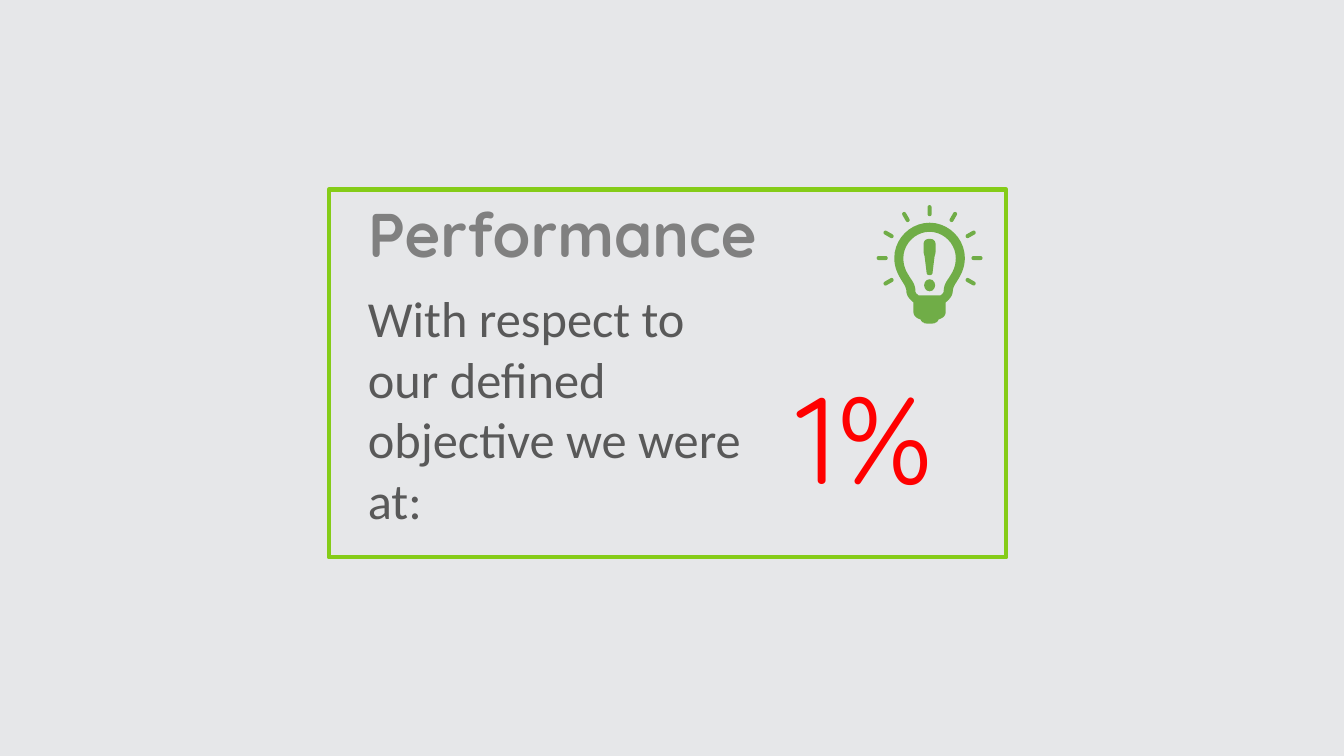
from math import cos, radians, sin

from pptx import Presentation
from pptx.dml.color import RGBColor
from pptx.enum.shapes import MSO_SHAPE
from pptx.enum.text import MSO_ANCHOR, PP_ALIGN
from pptx.util import Inches, Pt

COLORS = {
    "background": "E6E7E9",
    "border": "85CC18",
    "title": "808080",
    "body": "595959",
    "value": "FF0000",
    "bulb": "70AD47",
}
BULB_X, BULB_Y = 9.22, 2.56
RAY_RADIUS, RAY_WIDTH, RAY_LENGTH = 0.47, 0.04, 0.11
CURVE_STEPS = 10

BULB_OUTER = [
    (0, 2.21),
    (0.19, 2.21), (0.35, 2.37), (0.35, 2.56),
    (0.35, 2.68), (0.29, 2.76), (0.26, 2.81),
    (0.24, 2.84), (0.23, 2.87), (0.23, 2.89),
    (0.23, 2.93), (0.2, 2.97), (0.16, 3),
    (0.16, 3.03), (0.16, 3.09), (0.16, 3.09),
    (0.16, 3.12), (0.15, 3.15), (0.09, 3.17),
    (0.08, 3.19), (0.07, 3.2), (0.06, 3.2),
    (0.05, 3.21), (0.04, 3.21), (0.03, 3.21),
]
BULB_INNER = [
    (0, 2.3),
    (0.14, 2.3), (0.26, 2.42), (0.26, 2.56),
    (0.26, 2.66), (0.22, 2.71), (0.19, 2.76),
    (0.16, 2.8), (0.14, 2.84), (0.14, 2.89),
    (0.14, 2.91), (0.12, 2.92), (0.11, 2.93),
]
EXCLAMATION_STROKE = [
    (0, 2.37),
    (0.04, 2.37), (0.06, 2.39), (0.06, 2.43),
    (0.06, 2.51), (0.06, 2.51), (0.05, 2.54),
    (0.03, 2.7), (0.03, 2.7), (0.03, 2.7),
    (0.03, 2.72), (0.02, 2.73), (0, 2.73),
]


def color(name):
    return RGBColor.from_string(COLORS[name])


def write_text(shape, box, text, font_name, size, color_name, bold=False):
    shape.left, shape.top, shape.width, shape.height = map(Inches, box)
    text_frame = shape.text_frame
    text_frame.text = text
    text_frame.word_wrap = True
    text_frame.vertical_anchor = MSO_ANCHOR.TOP
    paragraph = text_frame.paragraphs[0]
    paragraph.alignment = PP_ALIGN.LEFT
    paragraph.line_spacing = 1.0
    paragraph.space_before = Pt(0)
    paragraph.space_after = Pt(12)
    font = paragraph.runs[0].font
    font.name, font.size, font.bold = font_name, Pt(size), bold
    font.color.rgb = color(color_name)


def add_text(slide, box, *style):
    write_text(slide.shapes.add_textbox(*map(Inches, box)), box, *style)


def add_border(slide, box):
    border = slide.shapes.add_shape(MSO_SHAPE.RECTANGLE, *map(Inches, box))
    border.shadow.inherit = False
    border.fill.background()
    border.line.color.rgb = color("border")
    border.line.width = Pt(3)


def paint_bulb_part(shape):
    shape.shadow.inherit = False
    shape.fill.solid()
    shape.fill.fore_color.rgb = color("bulb")
    shape.line.fill.background()


def bezier_point(controls, t):
    weights = ((1 - t) ** 3, 3 * t * (1 - t) ** 2, 3 * t**2 * (1 - t), t**3)
    return tuple(
        sum(weight * value for weight, value in zip(weights, values))
        for values in zip(*controls)
    )


def symmetric_contour(half):
    """Sample the right half's cubic curves and mirror them about the bulb's axis."""
    right = [half[0]]
    for start in range(0, len(half) - 1, 3):
        controls = half[start:start + 4]
        right += [bezier_point(controls, step / CURVE_STEPS)
                  for step in range(1, CURVE_STEPS + 1)]
    left = [(-x, y) for x, y in reversed(right)]
    return [(Inches(BULB_X + x), Inches(y)) for x, y in right + left]


def add_outline(group, *halves):
    contours = [symmetric_contour(half) for half in halves]
    builder = group.shapes.build_freeform(*contours[0][0])
    builder.add_line_segments(contours[0][1:])
    for contour in contours[1:]:
        builder.move_to(*contour[0])
        builder.add_line_segments(contour[1:])
    paint_bulb_part(builder.convert_to_shape())


def add_centered(group, preset, x, y, width, height):
    box = (x - width / 2, y - height / 2, width, height)
    shape = group.shapes.add_shape(preset, *map(Inches, box))
    paint_bulb_part(shape)
    return shape


def add_bulb(slide):
    group = slide.shapes.add_group_shape()
    add_outline(group, BULB_OUTER, BULB_INNER)
    for angle in range(-120, 121, 30):
        x = BULB_X + RAY_RADIUS * sin(radians(angle))
        y = BULB_Y - RAY_RADIUS * cos(radians(angle))
        ray = add_centered(group, MSO_SHAPE.ROUNDED_RECTANGLE, x, y,
                           RAY_WIDTH, RAY_LENGTH)
        ray.adjustments[0] = 0.5
        ray.rotation = angle
    add_outline(group, EXCLAMATION_STROKE)
    add_centered(group, MSO_SHAPE.OVAL, BULB_X, 2.83, 0.11, 0.12)


def main():
    presentation = Presentation()
    presentation.slide_width = Inches(13.33)
    presentation.slide_height = Inches(7.5)
    slide = presentation.slides.add_slide(presentation.slide_layouts[5])
    slide.background.fill.solid()
    slide.background.fill.fore_color.rgb = color("background")

    write_text(slide.shapes.title, (3.55, 1.89, 5.02, 0.84),
               "Performance", "Quicksand", 44, "title", True)
    add_border(slide, (3.26, 1.88, 6.72, 3.65))
    add_text(slide, (3.55, 2.8, 4.08, 2.52),
             "With respect to our defined objective we were at:",
             "Calibri", 36, "body")
    add_bulb(slide)
    add_text(slide, (7.8, 3.54, 2.02, 1.58), "1%", "Quicksand", 88, "value")
    presentation.save("out.pptx")


if __name__ == "__main__":
    main()
